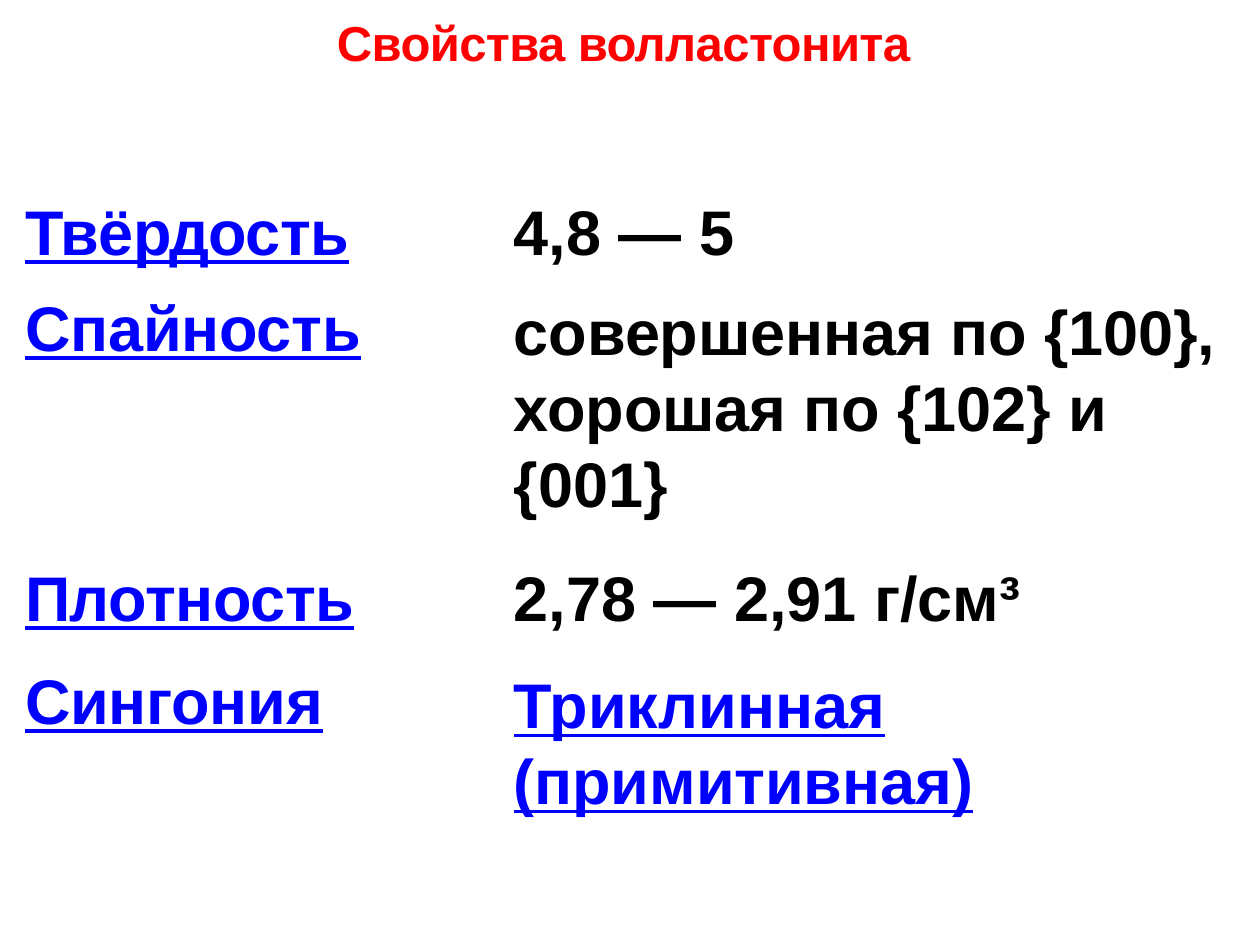
import pptx
import pptx.dml.color
import pptx.util

PIXEL = 914400 / 126
RED, BLUE, BLACK = "FF0000", "0000FF", "000000"


def px(length):
    return pptx.util.Emu(round(length * PIXEL))


def color(value):
    return pptx.dml.color.RGBColor.from_string(value)


class SlideBuilder:
    font_name = "Arial"
    no_margins = {"margin_left": 0, "margin_right": 0, "margin_top": 0, "margin_bottom": 0}

    def __init__(self, slide):
        self.slide = slide

    def apply(self, target, values):
        for name, value in values.items():
            setattr(target, name, value)

    def add_text(self, paragraph, text, size, hue, tracking=0, underline=False, **layout):
        self.apply(paragraph, layout)
        run = paragraph.add_run()
        run.text = text
        self.apply(run.font, {
            "name": self.font_name,
            "size": pptx.util.Pt(size),
            "bold": True,
            "underline": underline,
        })
        run.font.color.rgb = color(hue)
        run.font._element.set("spc", str(tracking))

    def title(self, text, left, top, width, height):
        shape = self.slide.shapes.add_textbox(px(left), px(top), px(width), px(height))
        frame = shape.text_frame
        self.apply(frame, {**self.no_margins, "word_wrap": True})
        self.add_text(frame.paragraphs[0], text, 28, RED, tracking=-35)

    def table(self, rows, left, top, widths, heights, indents):
        frame = self.slide.shapes.add_table(
            len(rows), len(widths), px(left), px(top), px(sum(widths)), px(sum(heights)))
        table = frame.table
        self.apply(table, {"first_row": False, "horz_banding": False})
        for column, width in zip(table.columns, widths):
            column.width = px(width)
        for row, height, contents in zip(table.rows, heights, rows):
            row.height = px(height)
            for cell, indent, paragraphs in zip(row.cells, indents, contents):
                self.cell(cell, indent, paragraphs)

    def cell(self, cell, indent, paragraphs):
        self.apply(cell, {**self.no_margins, "margin_left": px(indent)})
        cell.fill.background()
        frame = cell.text_frame
        for index, values in enumerate(paragraphs):
            paragraph = frame.add_paragraph() if index else frame.paragraphs[0]
            self.add_text(paragraph, size=36, **values)


def link(text, tracking, **layout):
    return {"text": text, "hue": BLUE, "underline": True, "tracking": tracking, **layout}


def value(text, tracking=0, **layout):
    return {"text": text, "hue": BLACK, "tracking": tracking, **layout}


def main():
    presentation = pptx.Presentation()
    presentation.slide_width = px(1260)
    presentation.slide_height = px(945)
    builder = SlideBuilder(presentation.slides.add_slide(presentation.slide_layouts[6]))

    builder.title("Свойства волластонита", 337, 13, 900, 59)
    properties = [
        ([link("Твёрдость", -34)], [value("4,8 — 5")]),
        ([link("Спайность", -10)], [
            value("совершенная по {100}, хорошая по {102} и", -7, line_spacing=1.07),
            value("{001}", space_before=pptx.util.Pt(3)),
        ]),
        ([link("Плотность", -23)], [value("2,78 — 2,91 г/см³", -3)]),
        ([link("Сингония", -13)], [link("Триклинная (примитивная)", -8, line_spacing=1.07)]),
    ]
    builder.table(properties, 5, 198, widths=[433, 800],
                  heights=[96, 270, 103, 171], indents=[20, 76])
    presentation.save("out.pptx")


if __name__ == "__main__":
    main()
